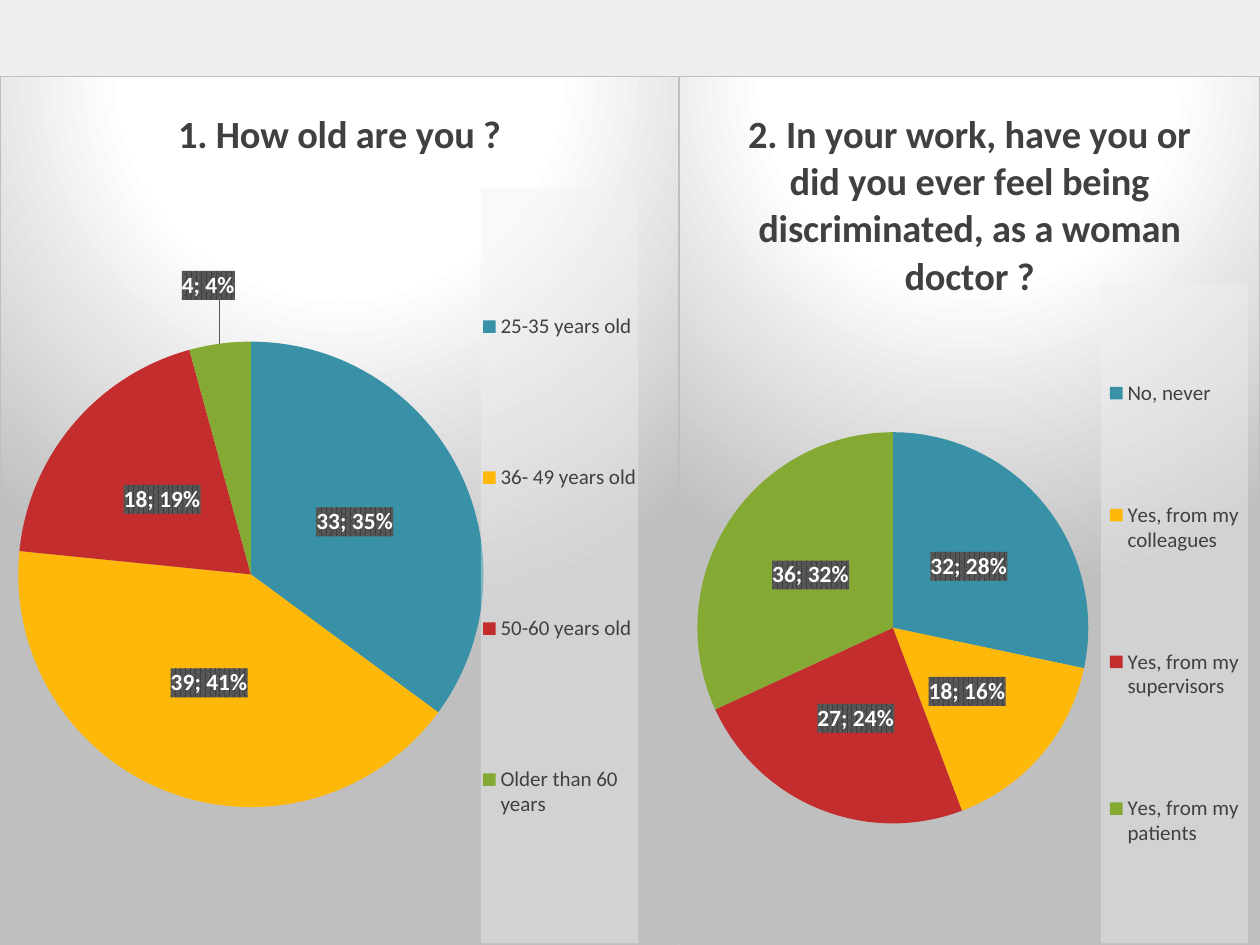
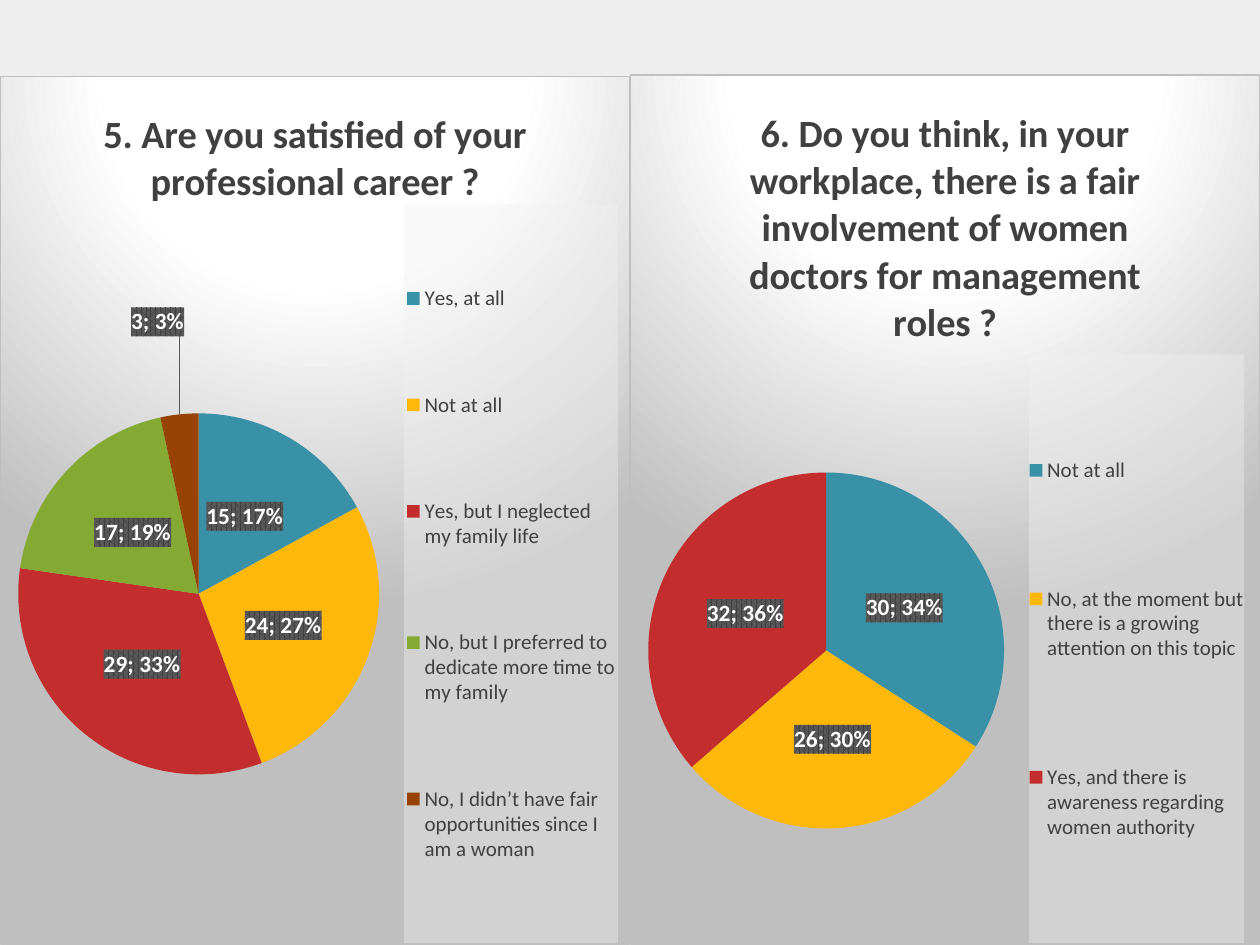
from copy import deepcopy

from pptx import Presentation
from pptx.chart.data import CategoryChartData
from pptx.dml.color import RGBColor
from pptx.enum.chart import XL_CHART_TYPE as ChartType
from pptx.enum.chart import XL_LABEL_POSITION as LabelPosition
from pptx.enum.chart import XL_LEGEND_POSITION as LegendPosition
from pptx.oxml import parse_xml
from pptx.oxml.ns import nsdecls, qn
from pptx.util import Inches, Pt

SLICE_COLORS = ["3891A7", "FEB80A", "C32D2E", "84AA33", "964305"]
BACKGROUND, TEXT, WHITE = "EEEEEE", "404040", "FFFFFF"
TITLE_FONT = {"size": Pt(22), "bold": True}
LEGEND_FONT = {"size": Pt(12), "bold": False}
LABEL_FONT = {"size": Pt(13.3), "bold": True}

PANEL_FILL = """<a:gradFill><a:gsLst>
  <a:gs pos="0"><a:srgbClr val="FFFFFF"/></a:gs>
  <a:gs pos="39000"><a:srgbClr val="FFFFFF"/></a:gs>
  <a:gs pos="100000"><a:srgbClr val="BFBFBF"/></a:gs></a:gsLst>
  <a:path path="circle">
  <a:fillToRect l="50000" t="-80000" r="50000" b="180000"/></a:path></a:gradFill>
  <a:ln w="9525"><a:solidFill><a:srgbClr val="BFBFBF"/></a:solidFill></a:ln>"""
LEGEND_FILL = """<a:solidFill><a:srgbClr val="F2F2F2"><a:alpha val="39000"/>
  </a:srgbClr></a:solidFill><a:ln><a:noFill/></a:ln>"""
LABEL_FILL = """<a:pattFill prst="pct75"><a:fgClr><a:srgbClr val="404040"/></a:fgClr>
  <a:bgClr><a:srgbClr val="595959"/></a:bgClr></a:pattFill><a:ln><a:noFill/></a:ln>"""
LEADER_LINE = """<a:ln w="9525"><a:solidFill><a:srgbClr val="595959"/>
  </a:solidFill></a:ln>"""


def rgb(color):
    return RGBColor.from_string(color)


def chart_element(tag, content=""):
    return parse_xml(f"<c:{tag} {nsdecls('c', 'a')}>{content}</c:{tag}>")


def manual_layout(target="", **fractions):
    modes = '<c:xMode val="edge"/><c:yMode val="edge"/>' if "w" in fractions else ""
    values = "".join(f'<c:{key} val="{value:.4f}"/>' for key, value in fractions.items())
    return chart_element("layout", f"<c:manualLayout>{target}{modes}{values}</c:manualLayout>")


def remove_layout(element):
    layout = element.find(qn("c:layout"))
    if layout is not None:
        element.remove(layout)


def format_font(font, values, color):
    for name, value in {"name": "Calibri", **values}.items():
        setattr(font, name, value)
    font.color.rgb = rgb(color)


class SurveyDeck:
    def __init__(self):
        self.presentation = Presentation()
        self.presentation.slide_width = Inches(10)
        self.presentation.slide_height = Inches(7.5)
        self.slide = None

    def add_slide(self):
        self.slide = self.presentation.slides.add_slide(self.presentation.slide_layouts[6])
        fill = self.slide.background.fill
        fill.solid()
        fill.fore_color.rgb = rgb(BACKGROUND)

    def add_pie(self, question, answers, box, pie, legend, outside=None, series_name=None):
        """pie is (top, diameter), legend is (left, top, width), in slide inches;
        outside moves the last label by fractions of the chart."""
        left, top, width, height = box
        data = CategoryChartData()
        data.categories = list(answers)
        data.add_series(series_name or question, list(answers.values()))
        chart = self.slide.shapes.add_chart(
            ChartType.PIE, *(Inches(length) for length in box), data).chart
        format_font(chart.font, {"size": Pt(10)}, "000000")
        chart._chartSpace.find(qn("c:chart")).addnext(chart_element("spPr", PANEL_FILL))

        chart.has_title = True
        title_frame = chart.chart_title.text_frame
        title_frame.text = question
        format_font(title_frame.paragraphs[0].runs[0].font, TITLE_FONT, TEXT)
        chart.chart_title.include_in_layout = False

        def place(x, y, w, h, target=""):
            return manual_layout(target, x=(x - left) / width, y=(y - top) / height,
                                 w=w / width, h=h / height)

        plot_area = chart._chartSpace.find(f".//{qn('c:plotArea')}")
        remove_layout(plot_area)
        pie_top, diameter = pie
        plot_area.insert(0, place(left + 0.14, pie_top, diameter, diameter,
                                  '<c:layoutTarget val="inner"/>'))
        self.color_slices(chart.plots[0])
        self.add_labels(chart.plots[0].series[0], len(answers) - 1, outside)
        self.add_legend(chart, place(*legend, 7.49 - legend[1]))

    def color_slices(self, plot):
        plot.vary_by_categories = True
        series = plot.series[0]
        for index, color in zip(range(len(series.values)), SLICE_COLORS):
            slice_format = series.points[index].format
            slice_format.fill.solid()
            slice_format.fill.fore_color.rgb = rgb(color)
            slice_format.line.fill.background()

    def add_labels(self, series, last, outside):
        labels = series.data_labels
        for name, value in {"show_value": True, "show_percentage": True,
                            "position": LabelPosition.CENTER}.items():
            setattr(labels, name, value)
        format_font(labels.font, LABEL_FONT, WHITE)
        element = labels._element
        element.find(qn("c:txPr")).addprevious(chart_element("spPr", LABEL_FILL))
        separator = chart_element("separator", "; ")
        element.find(qn("c:showBubbleSize")).addnext(separator)
        if outside:
            moved = chart_element("dLbl", f'<c:idx val="{last}"/>')
            moved.append(manual_layout(x=outside[0], y=outside[1]))
            for child in element:
                if child.tag not in (qn("c:showLeaderLines"), qn("c:numFmt")):
                    moved.append(deepcopy(child))
            element.insert(0, moved)
            element.append(chart_element("leaderLines", f"<c:spPr>{LEADER_LINE}</c:spPr>"))

    def add_legend(self, chart, layout):
        chart.has_legend = True
        legend = chart.legend
        legend.position = LegendPosition.RIGHT
        legend.include_in_layout = False
        format_font(legend.font, LEGEND_FONT, TEXT)
        element = legend._element
        remove_layout(element)
        element.find(qn("c:legendPos")).addnext(layout)
        element.find(qn("c:overlay")).addnext(chart_element("spPr", LEGEND_FILL))


def main():
    deck = SurveyDeck()

    deck.add_slide()
    deck.add_pie(
        "1. How old are you ?",
        {"25-35 years old": 33, "36- 49 years old": 39,
         "50-60 years old": 18, "Older than 60 years": 4},
        box=(0, 0.6, 5.39, 6.9), pie=(2.71, 3.7), legend=(3.82, 1.49, 1.25),
        outside=(-0.04, -0.2), series_name="Series 1")
    deck.add_pie(
        "2. In your work, have you or did you ever feel being discriminated, "
        "as a woman doctor ?",
        {"No, never": 32, "Yes, from my colleagues": 18,
         "Yes, from my supervisors": 27, "Yes, from my patients": 36},
        box=(5.39, 0.6, 4.61, 6.9), pie=(3.43, 3.11), legend=(8.74, 2.25, 1.17))

    deck.add_slide()
    deck.add_pie(
        "5. Are you satisfied of your professional career ?",
        {"Yes, at all": 15, "Not at all": 24, "Yes, but I neglected my family life": 29,
         "No, but I preferred to dedicate more time to my family": 17,
         "No, I didn’t have fair opportunities since I am a woman": 3},
        box=(0, 0.6, 5, 6.9), pie=(3.28, 2.87), legend=(3.21, 1.62, 1.7),
        outside=(-0.05, -0.21), series_name="Series 1")
    deck.add_pie(
        "6. Do you think, in your workplace, there is a fair involvement of women "
        "doctors for management roles ?",
        {"Not at all": 30,
         "No, at the moment but there is a growing attention on this topic": 26,
         "Yes, and there is awareness regarding women authority": 32},
        box=(5, 0.59, 5, 6.91), pie=(3.75, 2.83), legend=(8.17, 2.81, 1.71))

    deck.presentation.save("out.pptx")


if __name__ == "__main__":
    main()
